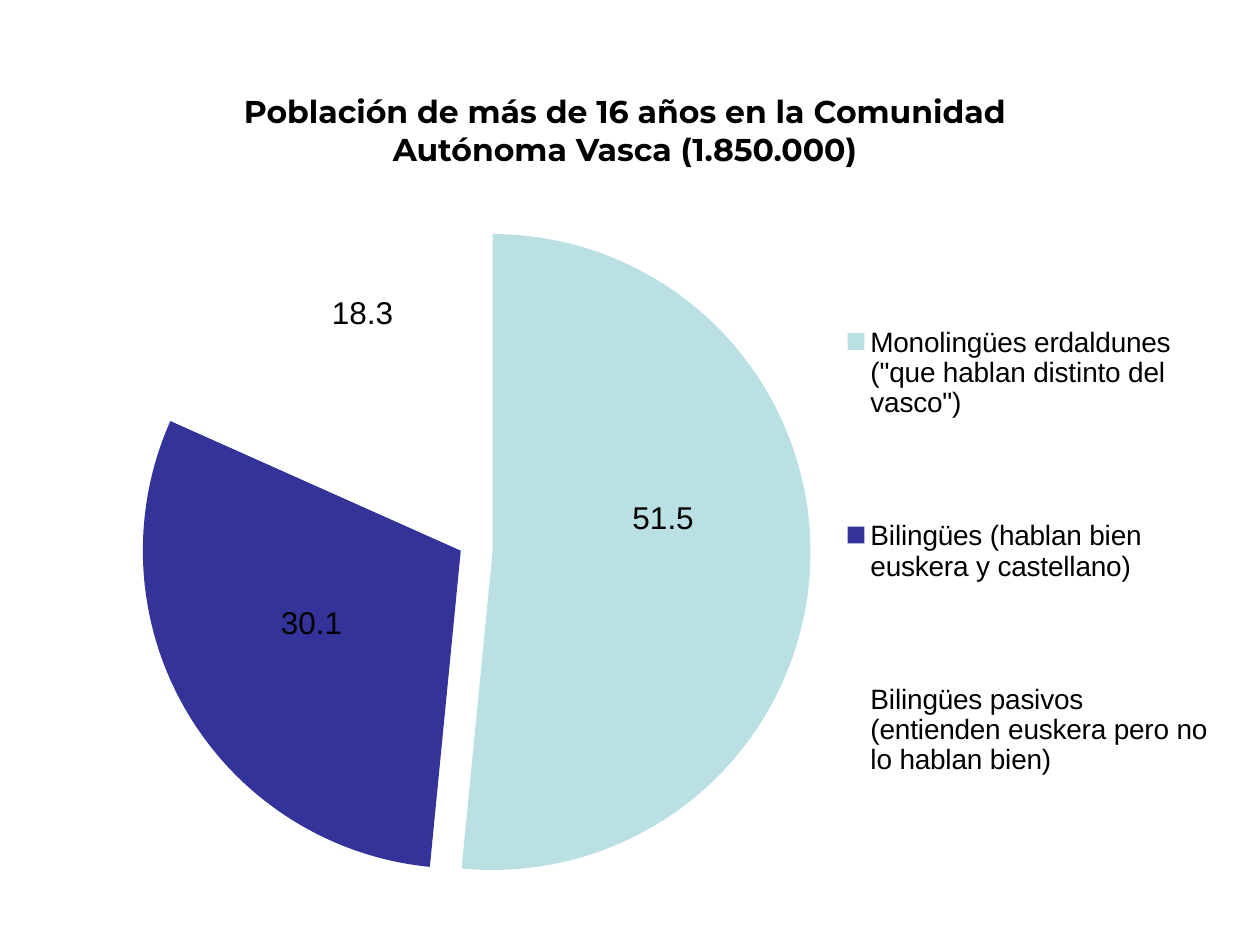
from lxml import etree
from pptx import Presentation
from pptx import util as u
from pptx.chart.data import CategoryChartData
from pptx.dml.color import RGBColor
from pptx.enum import chart as ch, text
from pptx.oxml import ns

TITLE = "Población de más de 16 años en la Comunidad Autónoma Vasca (1.850.000)"
GROUPS = [  # name, share in %, colour, explosion in %, label shift
    ('Monolingües erdaldunes ("que hablan distinto del vasco")',
     51.5, "BBE0E3", 10, (0.01, -0.06)),
    ("Bilingües (hablan bien euskera y castellano)",
     30.1, "333399", 0, (-0.01, -0.01)),
    ("Bilingües pasivos (entienden euskera pero no lo hablan bien)",
     18.3, "FFFFFF", 0, (-0.01, -0.15)),
]
TITLE_BOX = (1.22, 0.68, 7.48, 0.71)
CHART_BOX = (0.35, 1.62, 9.37, 5.51)
PIE_AREA = (0.043, 0.041, 0.62, 0.916)  # shares of the chart
LEGEND_AREA = (0.68, 0.03, 0.31, 0.94)


def colour(hex_text):
    return RGBColor.from_string(hex_text)


def set_font(font, size, name, bold=False):
    font.size, font.name, font.bold = u.Pt(size), name, bold
    font.color.rgb = colour("000000")


def chart_element(parent, tag, value=None):
    element = etree.SubElement(parent, ns.qn(f"c:{tag}"))
    if value is not None:
        element.set("val", str(value))
    return element


def place_part(part, area, modes=("xMode", "yMode"), inner=False):
    """Give a chart part a manual layout, in shares of the chart."""
    for old in part.findall(ns.qn("c:layout")):
        part.remove(old)
    layout = etree.Element(ns.qn("c:layout"))
    manual = chart_element(layout, "manualLayout")
    if inner:
        chart_element(manual, "layoutTarget", "inner")
    for tag in modes:
        chart_element(manual, tag, "edge")
    for tag, share in zip("xywh", area):
        chart_element(manual, tag, share)
    for tag in ("legendPos", "idx"):
        leader = part.find(ns.qn(f"c:{tag}"))
        if leader is not None:
            leader.addnext(layout)
            return
    part.insert(0, layout)


def add_title(slide):
    title = slide.shapes.title
    title.left, title.top, title.width, title.height = map(u.Inches, TITLE_BOX)
    frame = title.text_frame
    frame.word_wrap = True
    frame.auto_size = text.MSO_AUTO_SIZE.SHAPE_TO_FIT_TEXT
    frame.vertical_anchor = text.MSO_ANCHOR.TOP
    para = frame.paragraphs[0]
    para.alignment = text.PP_ALIGN.CENTER
    span = para.add_run()
    span.text = TITLE
    set_font(span.font, 18, "Montserrat", bold=True)


def format_slice(point, fill, explosion, shift):
    point.format.fill.solid()
    point.format.fill.fore_color.rgb = colour(fill)
    point.format.line.fill.background()
    if explosion:
        point.format.fill._xPr.addprevious(
            etree.Element(ns.qn("c:explosion"), val=str(explosion)))
    label = point.data_label
    set_font(label.font, 18, "Arial")
    label.position = ch.XL_LABEL_POSITION.CENTER
    place_part(label._dLbl, shift, modes=())


def add_pie(slide):
    data = CategoryChartData()
    data.categories = [group[0] for group in GROUPS]
    data.add_series("Series 1", [group[1] for group in GROUPS])
    chart = slide.shapes.add_chart(
        ch.XL_CHART_TYPE.PIE, *map(u.Inches, CHART_BOX), data).chart
    chart.has_title = False
    set_font(chart.font, 18, "Arial")

    plot = chart.plots[0]
    plot.vary_by_categories = True
    series = plot.series[0]
    series.data_labels.show_value = True
    for index, (_, _, *look) in enumerate(GROUPS):
        format_slice(series.points[index], *look)
    for lines in series._element.iter(ns.qn("c:showLeaderLines")):
        lines.set("val", "0")

    chart.has_legend = True
    legend = chart.legend
    legend.position = ch.XL_LEGEND_POSITION.RIGHT
    legend.include_in_layout = False
    set_font(legend.font, 16, "Arial")
    place_part(legend._element, LEGEND_AREA)
    place_part(chart._chartSpace.chart.plotArea, PIE_AREA, inner=True)


def main():
    deck = Presentation()
    deck.slide_width, deck.slide_height = u.Inches(10), u.Inches(7.5)
    slide = deck.slides.add_slide(deck.slide_layouts[5])
    add_pie(slide)
    add_title(slide)
    deck.save("out.pptx")


if __name__ == "__main__":
    main()
